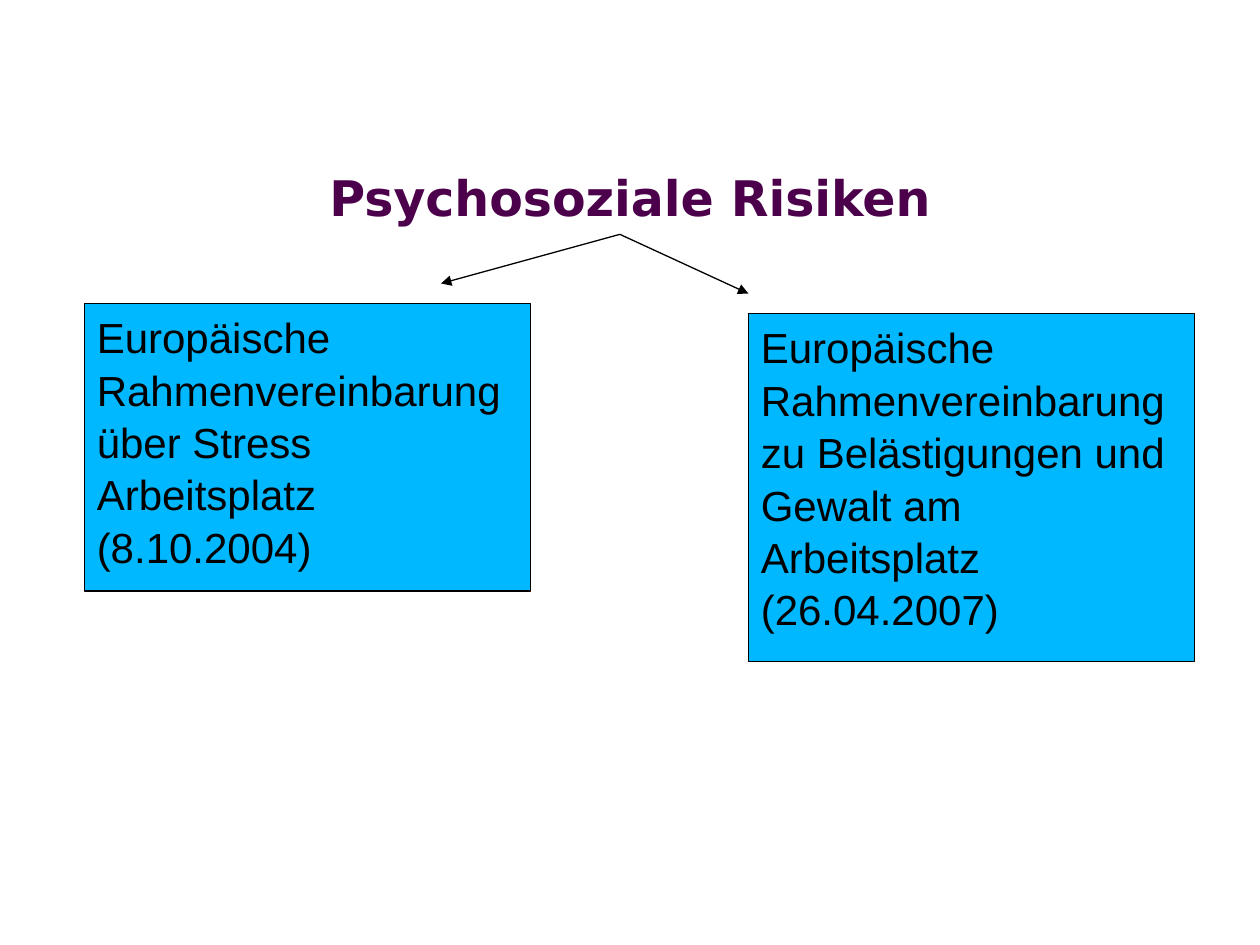
from lxml.etree import SubElement
from pptx import Presentation
from pptx.dml.color import RGBColor
from pptx.enum.shapes import MSO_CONNECTOR as CONN, MSO_SHAPE as SHAPE
from pptx.enum.text import MSO_ANCHOR as ANCHOR, PP_ALIGN as ALIGN
from pptx.oxml.ns import qn
from pptx.util import Inches, Pt

COLORS = {"title": "4C004C", "box": "00B8FF", "ink": "000000"}
BOX_WIDTH = 3.54


def rgb(name):
    return RGBColor.from_string(COLORS[name])


def write(tf, paragraphs, font="Arial", size=24, color="ink", bold=False,
          align=ALIGN.LEFT, anchor=ANCHOR.TOP, spacing=1.0):
    tf.word_wrap = True
    tf.vertical_anchor = anchor
    tf.margin_left = tf.margin_right = Inches(0.1)
    tf.margin_top = tf.margin_bottom = Inches(0.05)
    for i, text in enumerate(paragraphs):
        p = tf.add_paragraph() if i else tf.paragraphs[0]
        p.alignment = align
        p.line_spacing = spacing
        p.space_before = p.space_after = Pt(0)
        r = p.add_run()
        r.text = text
        r.font.name, r.font.size, r.font.bold = font, Pt(size), bold
        r.font.color.rgb = rgb(color)


def set_line(sp):
    sp.line.color.rgb = rgb("ink")
    sp.line.width = Pt(0.75)


def add_title(s, text):
    sp = s.shapes.title
    sp.left, sp.top = Inches(0.75), Inches(0.6)
    sp.width, sp.height = Inches(8.5), Inches(1.25)
    write(sp.text_frame, [text], font="DejaVu Sans", size=28, color="title",
          bold=True, align=ALIGN.CENTER, anchor=ANCHOR.BOTTOM)


def add_arrow(s, start, end):
    sp = s.shapes.add_connector(CONN.STRAIGHT, *map(Inches, start + end))
    set_line(sp)
    SubElement(sp.line._get_or_add_ln(), qn("a:tailEnd"), type="triangle")
    SubElement(sp._element.spPr, qn("a:effectLst"))


def add_box(s, left, top, height, paragraphs):
    sp = s.shapes.add_shape(SHAPE.RECTANGLE, Inches(left), Inches(top),
                            Inches(BOX_WIDTH), Inches(height))
    sp.shadow.inherit = False
    sp.fill.solid()
    sp.fill.fore_color.rgb = rgb("box")
    set_line(sp)
    write(sp.text_frame, paragraphs, spacing=1.04)


def main():
    prs = Presentation()
    prs.slide_width, prs.slide_height = Inches(10), Inches(7.5)
    s = prs.slides.add_slide(prs.slide_layouts[5])

    add_title(s, "Psychosoziale Risiken")

    # Arrows fan out from below the title
    for end in ((3.5, 2.25), (5.94, 2.33)):
        add_arrow(s, (4.92, 1.86), end)

    # The two framework agreements
    add_box(s, 0.67, 2.41, 2.28, [
        "Europäische Rahmenvereinbarung über Stress Arbeitsplatz",
        "(8.10.2004)"])
    add_box(s, 5.94, 2.49, 2.76, [
        "Europäische Rahmenvereinbarung zu Belästigungen und Gewalt am Arbeitsplatz",
        "(26.04.2007)"])

    prs.save("out.pptx")


if __name__ == "__main__":
    main()
